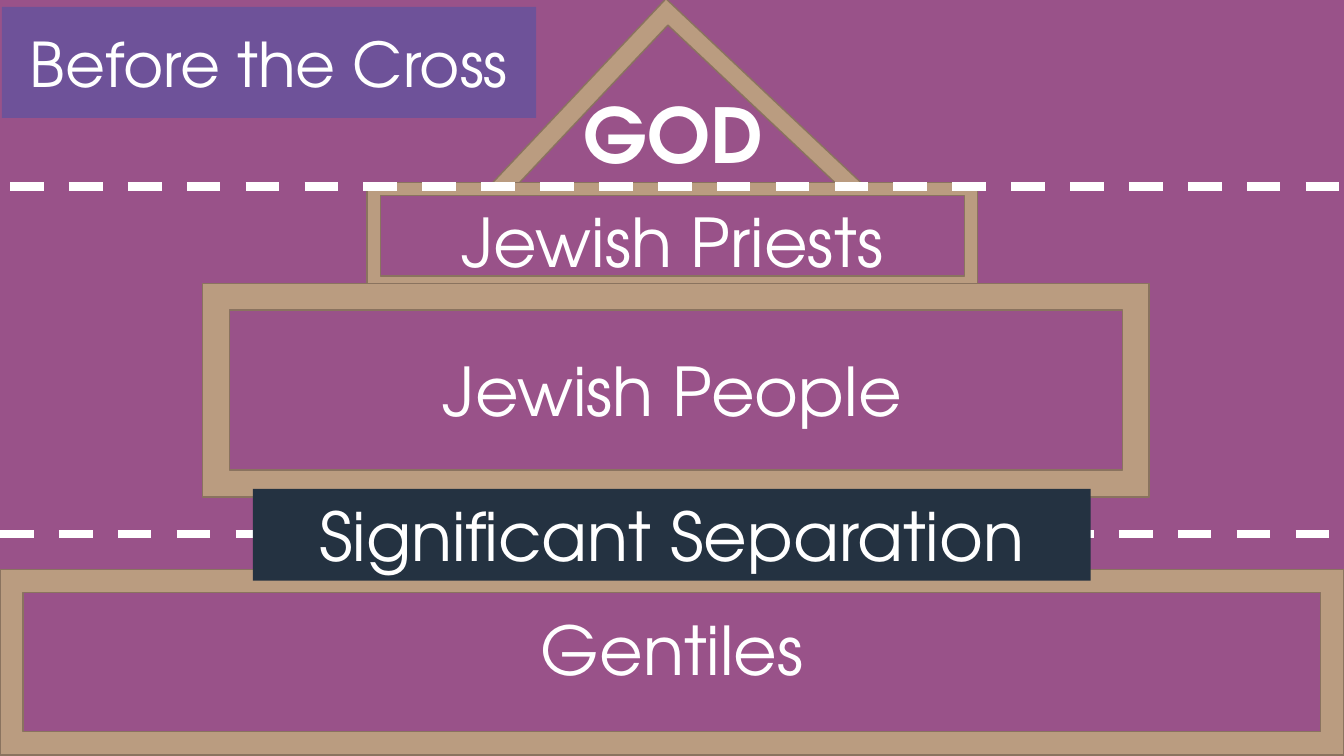
"""Build the "Before the Cross" pyramid slide."""
import pptx
import pptx.dml.color
import pptx.enum.dml
import pptx.enum.shapes
import pptx.enum.text
import pptx.oxml
import pptx.oxml.ns
import pptx.util

Pt = pptx.util.Pt
SHAPE = pptx.enum.shapes.MSO_SHAPE
ANCHOR = pptx.enum.text.MSO_ANCHOR
COLORS = {
    "plum": "995289",
    "tan": "BA9C80",
    "brown": "8A735F",
    "violet": "6E5299",
    "navy": "243241",
    "white": "FFFFFF",
}
WIDTH, HEIGHT = 960, 540


def rgb(name):
    return pptx.dml.color.RGBColor.from_string(COLORS[name])


def write(sp, text, size=48, bold=False, color="white",
          font="TeX Gyre Adventor", anchor=ANCHOR.TOP):
    tf = sp.text_frame
    tf.word_wrap = True
    tf.auto_size = pptx.enum.text.MSO_AUTO_SIZE.NONE
    tf.vertical_anchor = anchor
    p = tf.paragraphs[0]
    p.alignment = pptx.enum.text.PP_ALIGN.CENTER
    r = p.add_run()
    r.text = text
    r.font.name = font
    r.font.size = Pt(size)
    r.font.bold = bold
    r.font.color.rgb = rgb(color)


class Deck:
    def __init__(self, prs):
        self.s = prs.slides.add_slide(prs.slide_layouts[5])
        self.s.background.fill.solid()
        self.s.background.fill.fore_color.rgb = rgb("plum")

    def title(self, text, x, y, w, h, fill):
        sp = self.s.shapes.title
        sp.left, sp.top, sp.width, sp.height = map(Pt, (x, y, w, h))
        sp.fill.solid()
        sp.fill.fore_color.rgb = rgb(fill)
        write(sp, text, size=44, anchor=ANCHOR.MIDDLE)

    def shape(self, kind, x, y, w, h, fill="tan", line="brown"):
        sp = self.s.shapes.add_shape(kind, *map(Pt, (x, y, w, h)))
        sp.shadow.inherit = False
        sp.fill.solid()
        sp.fill.fore_color.rgb = rgb(fill)
        if line:
            sp.line.color.rgb = rgb(line)
            sp.line.width = Pt(1)
        else:
            sp.line.fill.background()
        return sp

    def roof(self, x, y, w, h, angle, adjustments):
        sp = self.shape(SHAPE.HALF_FRAME, x, y, w, h)
        sp.rotation = angle
        for i, value in enumerate(adjustments):
            sp.adjustments[i] = value

    def label(self, text, x, y, w, h, **fmt):
        write(self.s.shapes.add_textbox(*map(Pt, (x, y, w, h))), text, **fmt)

    def banner(self, text, x, y, w, h, fill):
        write(self.shape(SHAPE.RECTANGLE, x, y, w, h, fill, None), text)

    def divider(self, x, y):
        line = self.s.shapes.add_connector(
            pptx.enum.shapes.MSO_CONNECTOR.STRAIGHT,
            *map(Pt, (x, y, x + WIDTH, y)))
        line.line.color.rgb = rgb("white")
        line.line.width = Pt(6)
        line.line.dash_style = pptx.enum.dml.MSO_LINE.DASH
        pptx.oxml.ns.qn("a:effectLst")
        line._element.spPr.append(pptx.oxml.parse_xml(
            '<a:effectLst xmlns:a="http://schemas.openxmlformats.org/'
            'drawingml/2006/main"/>'))


def main():
    prs = pptx.Presentation()
    prs.slide_width, prs.slide_height = Pt(WIDTH), Pt(HEIGHT)
    deck = Deck(prs)
    deck.title("Before the Cross", 1.4, 5, 381.6, 79.2, "violet")
    deck.roof(383, 41.8, 200.2, 190.8, 43.3, (0.067, 0.073))
    deck.label("GOD", 401.8, 59, 159.1, 72.7, size=54, bold=True)

    tiers = [
        ("Jewish Priests", 139.7, (262.1, 130.3, 436.3, 76.3)),
        ("Jewish People", 246.2, (144.7, 202.3, 676.1, 152.6)),
        ("Gentiles", 430.6, (0, 406.8, WIDTH, 132.5)),
    ]
    for text, top, frame in tiers:
        deck.shape(SHAPE.FRAME, *frame)
        deck.label(text, 262.1, top, 436.3, 65.5)

    deck.divider(0, 381.6)
    deck.banner("Significant Separation", 180.7, 349.2, 598.3, 65.5, "navy")
    deck.divider(7.2, 133.2)
    prs.save("out.pptx")


if __name__ == "__main__":
    main()
